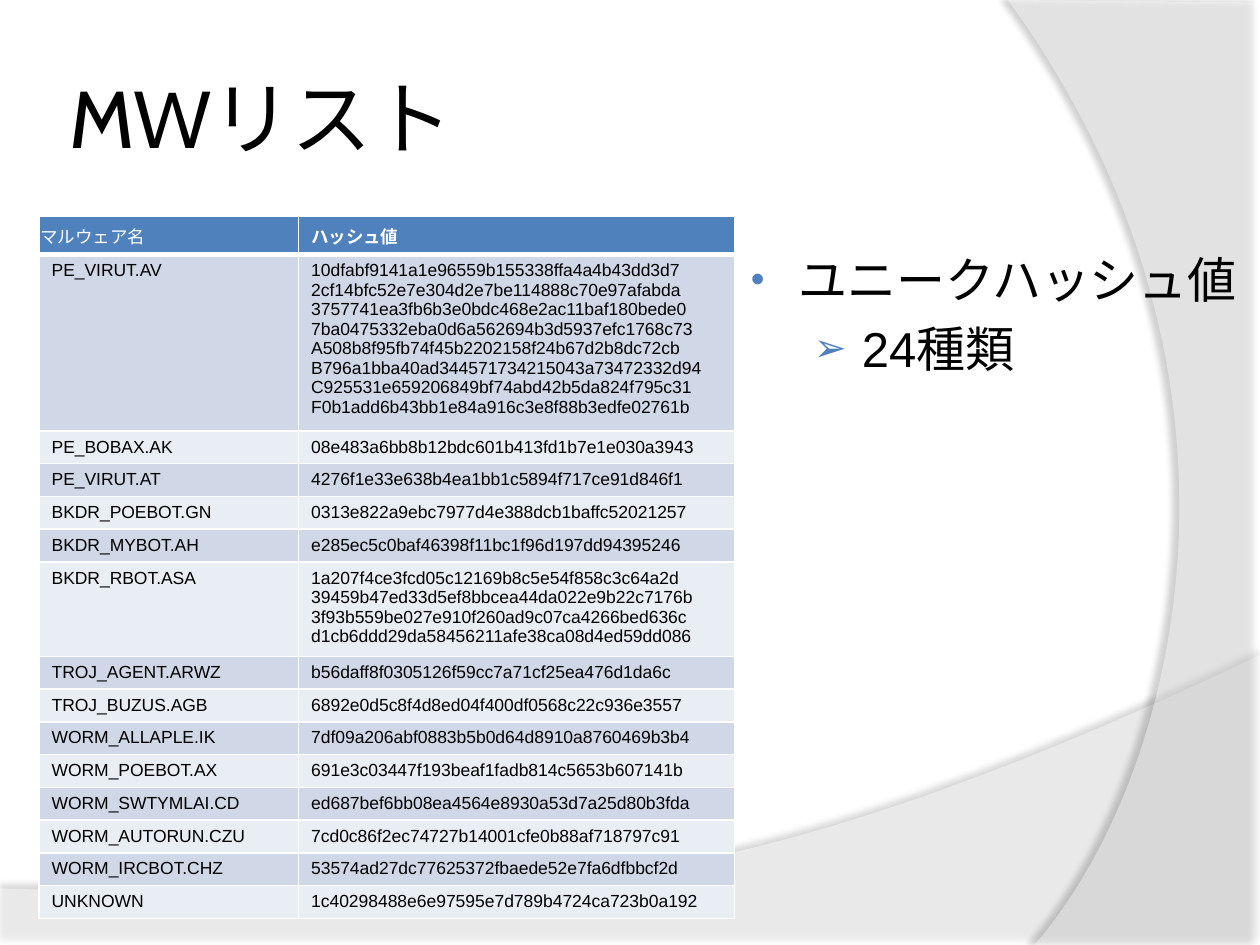
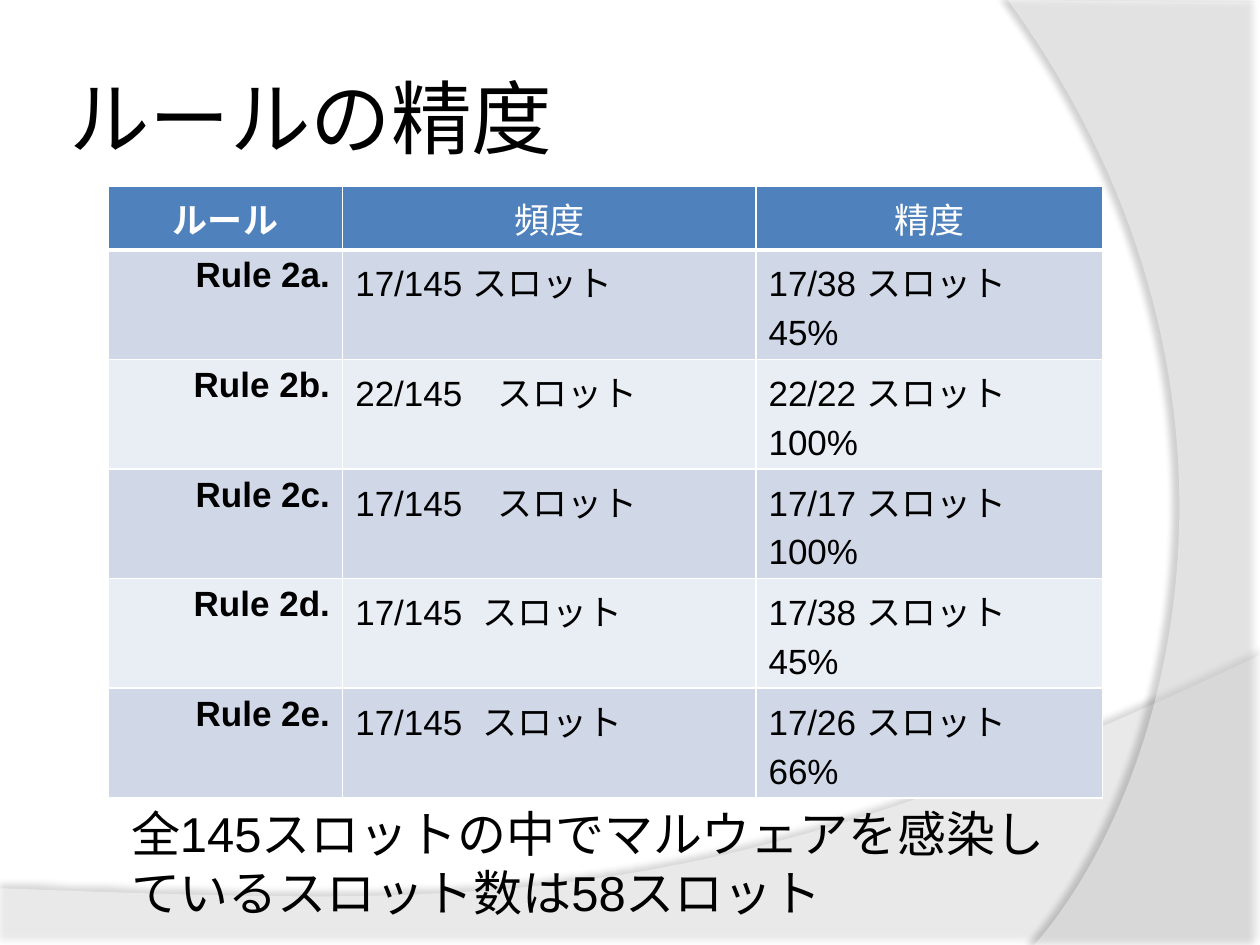
from lxml.etree import SubElement
from pptx import Presentation
from pptx.dml.color import RGBColor
from pptx.enum.text import MSO_ANCHOR as Anchor, MSO_AUTO_SIZE as AutoSize, PP_ALIGN as Align
from pptx.oxml import parse_xml
from pptx.oxml.ns import nsdecls, qn
from pptx.util import Inches, Pt

# Shared colours and fonts
WHITE = RGBColor(0xFF, 0xFF, 0xFF)
BLACK = RGBColor(0, 0, 0)
BLUE = RGBColor(0x4F, 0x81, 0xBD)
BANDS = (RGBColor(0xD0, 0xD8, 0xE8), RGBColor(0xE9, 0xED, 0xF4))
TITLE_FONT, BODY_FONT, JAPANESE_FONT = "Cabin", "Arial", "Noto Sans CJK JP"
MARGINS = ("margin_left", "margin_top", "margin_right", "margin_bottom")

# Slide 1: malware names and their hash values
MALWARE = [
    ("PE_VIRUT.AV", """10dfabf9141a1e96559b155338ffa4a4b43dd3d7
2cf14bfc52e7e304d2e7be114888c70e97afabda
3757741ea3fb6b3e0bdc468e2ac11baf180bede0
7ba0475332eba0d6a562694b3d5937efc1768c73
A508b8f95fb74f45b2202158f24b67d2b8dc72cb
B796a1bba40ad344571734215043a73472332d94
C925531e659206849bf74abd42b5da824f795c31
F0b1add6b43bb1e84a916c3e8f88b3edfe02761b"""),
    ("PE_BOBAX.AK", "08e483a6bb8b12bdc601b413fd1b7e1e030a3943"),
    ("PE_VIRUT.AT", "4276f1e33e638b4ea1bb1c5894f717ce91d846f1"),
    ("BKDR_POEBOT.GN", "0313e822a9ebc7977d4e388dcb1baffc52021257"),
    ("BKDR_MYBOT.AH", "e285ec5c0baf46398f11bc1f96d197dd94395246"),
    ("BKDR_RBOT.ASA", """1a207f4ce3fcd05c12169b8c5e54f858c3c64a2d
39459b47ed33d5ef8bbcea44da022e9b22c7176b
3f93b559be027e910f260ad9c07ca4266bed636c
d1cb6ddd29da58456211afe38ca08d4ed59dd086"""),
    ("TROJ_AGENT.ARWZ", "b56daff8f0305126f59cc7a71cf25ea476d1da6c"),
    ("TROJ_BUZUS.AGB", "6892e0d5c8f4d8ed04f400df0568c22c936e3557"),
    ("WORM_ALLAPLE.IK", "7df09a206abf0883b5b0d64d8910a8760469b3b4"),
    ("WORM_POEBOT.AX", "691e3c03447f193beaf1fadb814c5653b607141b"),
    ("WORM_SWTYMLAI.CD", "ed687bef6bb08ea4564e8930a53d7a25d80b3fda"),
    ("WORM_AUTORUN.CZU", "7cd0c86f2ec74727b14001cfe0b88af718797c91"),
    ("WORM_IRCBOT.CHZ", "53574ad27dc77625372fbaede52e7fa6dfbbcf2d"),
    ("UNKNOWN", "1c40298488e6e97595e7d789b4724ca723b0a192"),
]

# Slide 2: frequency and precision of each rule
RULES = [
    ("Rule 2a.", "17/145 スロット", "17/38 スロット\n45%"),
    ("Rule 2b.", "22/145　スロット", "22/22 スロット\n100%"),
    ("Rule 2c.", "17/145　スロット", "17/17 スロット\n100%"),
    ("Rule 2d.", "17/145  スロット", "17/38 スロット\n45%"),
    ("Rule 2e.", "17/145  スロット", "17/26 スロット\n66%"),
]


def set_values(target, values):
    for name, value in values.items():
        setattr(target, name, value)


def bezier(start, control1, control2, end, steps=60):
    """Points along a cubic curve, without its start."""
    points = []
    for step in range(1, steps + 1):
        t = step / steps
        weights = ((1 - t) ** 3, 3 * t * (1 - t) ** 2, 3 * t * t * (1 - t), t ** 3)
        corners = (start, control1, control2, end)
        points.append(tuple(sum(w * c[axis] for w, c in zip(weights, corners)) for axis in (0, 1)))
    return points


class Deck:
    def __init__(self):
        self.presentation = Presentation()
        set_values(self.presentation, {"slide_width": Inches(10), "slide_height": Inches(7.5)})
        self.slide = None

    def add_slide(self, title):
        self.slide = self.presentation.slides.add_slide(self.presentation.slide_layouts[1])
        frame = self.place(self.slide.shapes.title, 0.5, 0.3, 8.17, 1.25)
        set_values(frame, {"vertical_anchor": Anchor.MIDDLE, **dict.fromkeys(MARGINS, Inches(0.05))})
        self.fill_text(frame, title, 46, font=TITLE_FONT)

    def place(self, shape, *box):
        set_values(shape, dict(zip(("left", "top", "width", "height"), map(Inches, box))))
        set_values(shape.text_frame, {"word_wrap": True, "auto_size": AutoSize.NONE})
        return shape.text_frame

    def fill_text(self, frame, text, size, font=BODY_FONT, color=BLACK, bold=False,
                  align=Align.LEFT, spaced=False):
        frame.text = text
        for paragraph in frame.paragraphs:
            paragraph.alignment = align
            if spaced:
                self.space_before(paragraph)
            for run in paragraph.runs:
                set_values(run.font, {"size": Pt(size), "name": font, "bold": bold})
                run.font.color.rgb = color
                SubElement(run.font._element, qn("a:ea"), typeface=JAPANESE_FONT)

    def space_before(self, paragraph):
        """Space of 20 % of a line."""
        properties = paragraph._p.get_or_add_pPr()
        spacing = SubElement(properties, qn("a:spcBef"))
        SubElement(spacing, qn("a:spcPct"), val="20000")
        return properties

    def add_body(self, text, box, bullets=()):
        """Body text; bullets holds a mark and an indent for each level."""
        frame = self.place(self.slide.placeholders[1], *box)
        self.fill_text(frame, text, 28)
        for level, paragraph in enumerate(frame.paragraphs):
            paragraph.level = level
            properties = self.space_before(paragraph)
            mark, indent, hanging = (*bullets[level], -0.38) if bullets else (None, 0, 0)
            properties.set("marL", str(Inches(indent)))
            properties.set("indent", str(Inches(hanging)))
            if mark is None:
                SubElement(properties, qn("a:buNone"))
                continue
            color = SubElement(properties, qn("a:buClr"))
            SubElement(color, qn("a:srgbClr"), val=str(BLUE))
            SubElement(properties, qn("a:buSzPct"), val="80000")
            SubElement(properties, qn("a:buFont"), typeface=BODY_FONT)
            SubElement(properties, qn("a:buChar"), char=mark)

    def add_table(self, rows, left, top, widths, heights, size, header_styles, column_styles):
        box = map(Inches, (left, top, sum(widths), sum(heights)))
        table = self.slide.shapes.add_table(len(rows), len(widths), *box).table
        for column, width in zip(table.columns, widths):
            column.width = Inches(width)
        for row, height in zip(table.rows, heights):
            row.height = Inches(height)
        for row_index, row in enumerate(rows):
            for column_index, text in enumerate(row):
                cell = table.cell(row_index, column_index)
                cell.fill.solid()
                if row_index == 0:
                    cell.fill.fore_color.rgb = BLUE
                    style = {"color": WHITE, **header_styles[column_index]}
                else:
                    cell.fill.fore_color.rgb = BANDS[(row_index - 1) % 2]
                    style = column_styles[column_index]
                self.fill_text(cell.text_frame, text, size, **style)
                self.add_borders(cell, row_index)
        return table

    def add_borders(self, cell, row_index):
        """White rules, thicker below the header."""
        properties = cell._tc.get_or_add_tcPr()
        for position, side in enumerate("LRTB"):
            thick = (row_index, side) in ((0, "B"), (1, "T"))
            properties.insert(position, parse_xml(
                f'<a:ln{side} {nsdecls("a")} w="{Pt(3 if thick else 1)}"><a:solidFill>'
                f'<a:srgbClr val="{WHITE}"/></a:solidFill></a:ln{side}>'))

    def add_backdrop(self, number, points, opacity, shadow_opacity, distance, angle):
        """Draw a translucent sweep and move it to the slide master."""
        points = [(Inches(x), Inches(y)) for x, y in points]
        builder = self.slide.shapes.build_freeform(*points[0])
        builder.add_line_segments(points[1:], close=True)
        shape = builder.convert_to_shape()
        shape.fill.solid()
        shape.fill.fore_color.rgb = WHITE
        shape.line.fill.background()
        shape.shadow.inherit = False
        element = shape.element
        color = element.spPr.find(".//" + qn("a:srgbClr"))
        SubElement(color, qn("a:alpha"), val=str(opacity * 1000))
        element.spPr.find(qn("a:effectLst")).append(parse_xml(
            f'<a:outerShdw {nsdecls("a")} blurRad="{Pt(4)}" dist="{Pt(distance)}" '
            f'dir="{angle * 60000}" algn="ctr" rotWithShape="0"><a:srgbClr val="{BLACK}">'
            f'<a:alpha val="{shadow_opacity * 1000}"/></a:srgbClr></a:outerShdw>'))
        element.find(".//" + qn("p:cNvPr")).set("id", str(100 + number))
        self.presentation.slide_master.shapes.element.insert(2 + number, element)


def main():
    deck = Deck()

    # Malware list
    deck.add_slide("MWリスト")
    wave = [(0, 7.05), (0, 7.5), (10, 7.5), (10, 5.2)]
    wave += bezier((10, 5.2), (5.59, 7.29), (3.91, 7.19), (0, 7.05))
    deck.add_backdrop(0, wave, 45, 35, 3.5, 270)
    arc = [(10, 0.02), (10, 7.5), (8.21, 7.5)]
    arc += bezier((8.21, 7.5), (9.35, 6.19), (10.18, 3), (8, 0))
    deck.add_backdrop(1, arc, 40, 45, 4, 180)

    heights = [0.29] + [{8: 1.4, 4: 0.75}.get(len(hashes.split("\n")), 0.26)
                        for _, hashes in MALWARE]
    table = deck.add_table([("マルウェア名", "ハッシュ値")] + MALWARE, 0.31, 1.72, (2.06, 3.46),
                           heights, 10, ({"font": JAPANESE_FONT}, {"bold": True}), ({}, {}))
    name_header = table.cell(0, 0)
    set_values(name_header, {"vertical_anchor": Anchor.MIDDLE, "margin_bottom": 0,
                             **dict.fromkeys(MARGINS[:3], Inches(0.01))})
    deck.add_body("ユニークハッシュ値\n24種類", (5.86, 1.93, 4.14, 4.95),
                  (("•", 0.38), ("➢", 0.88)))

    # Rule precision
    deck.add_slide("ルールの精度")
    centred = {"align": Align.CENTER, "spaced": True}
    deck.add_table([("ルール", "頻度", "精度")] + RULES, 0.86, 1.48, (1.86, 3.28, 2.75),
                   [0.49] + [0.87] * len(RULES), 20,
                   ({"bold": True, **centred}, centred, centred),
                   ({"bold": True, "align": Align.RIGHT, "spaced": True},
                    {"spaced": True}, {"spaced": True}))
    deck.add_body("全145スロットの中でマルウェアを感染しているスロット数は58スロット",
                  (0.94, 6.33, 7.73, 1.04))

    deck.presentation.save("out.pptx")


if __name__ == "__main__":
    main()
